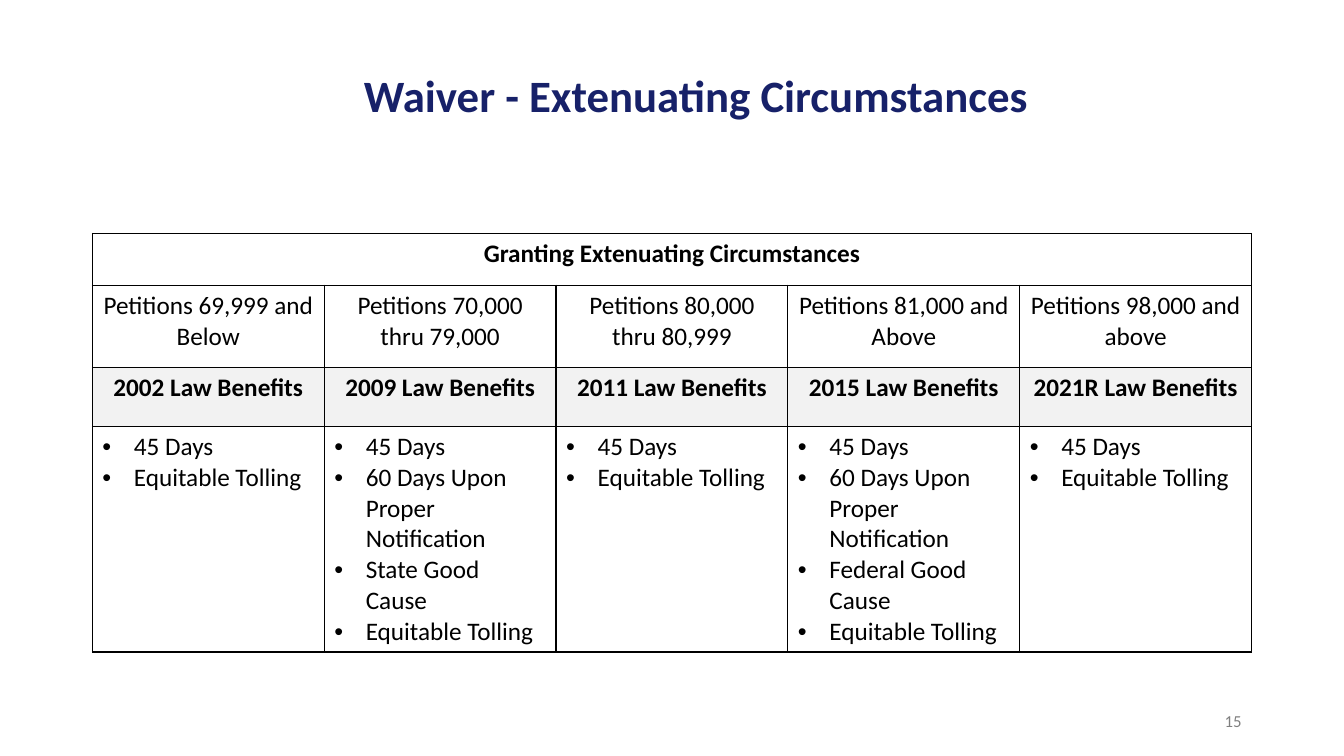
from dataclasses import dataclass

from lxml.etree import SubElement
from pptx import Presentation
from pptx.dml.color import RGBColor
from pptx.enum.text import MSO_ANCHOR, MSO_AUTO_SIZE, PP_ALIGN
from pptx.oxml.ns import qn
from pptx.util import Pt


@dataclass(frozen=True)
class Theme:
    """Colours, font and type sizes of the slide."""
    font: str = "Calibri"
    navy: str = "172169"
    black: str = "000000"
    grey: str = "808080"
    shade: str = "F2F2F2"
    title: int = 32
    body: int = 18
    number: int = 12


THEME = Theme()
HEADING = "Granting Extenuating Circumstances"
BASIC = ["45 Days", "Equitable Tolling"]
LAWS = [
    ("Petitions 69,999 and Below", "2002 Law Benefits", BASIC),
    ("Petitions 70,000 thru 79,000", "2009 Law Benefits",
     ["45 Days", "60 Days Upon Proper Notification", "State Good Cause", "Equitable Tolling"]),
    ("Petitions 80,000 thru 80,999", "2011 Law Benefits", BASIC),
    ("Petitions 81,000 and Above", "2015 Law Benefits",
     ["45 Days", "60 Days Upon Proper Notification", "Federal Good Cause", "Equitable Tolling"]),
    ("Petitions 98,000 and above", "2021R Law Benefits", BASIC),
]
ROW_HEIGHTS = [37, 59, 42, 161]


def write(p, text, size, color, align, bold=False):
    """Fill a paragraph with text and format its runs."""
    p.text = text
    p.alignment = align
    for r in p.runs:
        r.font.name = THEME.font
        r.font.size = Pt(size)
        r.font.bold = bold
        r.font.color.rgb = RGBColor.from_string(color)


def add_bullet(p, indent=22.5):
    """Give a paragraph a hanging round bullet."""
    pPr = p._p.get_or_add_pPr()
    pPr.set("marL", str(Pt(indent)))
    pPr.set("indent", str(-Pt(indent)))
    SubElement(pPr, qn("a:buFont"), typeface="Arial")
    SubElement(pPr, qn("a:buChar"), char="•")


def add_borders(cell, width=1):
    """Draw a thin solid line on all four sides of a cell."""
    tcPr = cell._tc.get_or_add_tcPr()
    for side in ("lnL", "lnR", "lnT", "lnB"):
        ln = SubElement(tcPr, qn(f"a:{side}"), w=str(Pt(width)))
        fill = SubElement(ln, qn("a:solidFill"))
        SubElement(fill, qn("a:srgbClr"), val=THEME.black)


def write_cell(cell, text, bold=False):
    """Write one centred line of table text."""
    write(cell.text_frame.paragraphs[0], text, THEME.body, THEME.black, PP_ALIGN.CENTER, bold)


def write_list(cell, items):
    """Write a bulleted list in a table cell."""
    tf = cell.text_frame
    for i, item in enumerate(items):
        p = tf.add_paragraph() if i else tf.paragraphs[0]
        add_bullet(p)
        write(p, item, THEME.body, THEME.black, PP_ALIGN.LEFT)


def add_title(s, text, x, y, w, h):
    """Place and format the title placeholder."""
    sp = s.shapes.title
    sp.left, sp.top, sp.width, sp.height = Pt(x), Pt(y), Pt(w), Pt(h)
    tf = sp.text_frame
    tf.auto_size = MSO_AUTO_SIZE.NONE
    tf.vertical_anchor = MSO_ANCHOR.MIDDLE
    p = tf.paragraphs[0]
    write(p, text, THEME.title, THEME.navy, PP_ALIGN.LEFT, True)
    p.line_spacing = 0.9


def add_law_table(s, x, y, w):
    """Build the table of benefits, one column for each law."""
    frame = s.shapes.add_table(len(ROW_HEIGHTS), len(LAWS), Pt(x), Pt(y), Pt(w), Pt(sum(ROW_HEIGHTS)))
    table = frame.table
    table.first_row = table.horz_banding = False
    for row, height in zip(table.rows, ROW_HEIGHTS):
        row.height = Pt(height)
    for col in table.columns:
        col.width = Pt(w / len(LAWS))
    for cell in table.iter_cells():
        add_borders(cell)
        cell.fill.background()
    table.cell(0, 0).merge(table.cell(0, len(LAWS) - 1))
    write_cell(table.cell(0, 0), HEADING, True)
    for c, (petitions, law, benefits) in enumerate(LAWS):
        write_cell(table.cell(1, c), petitions)
        cell = table.cell(2, c)
        write_cell(cell, law, True)
        cell.fill.solid()
        cell.fill.fore_color.rgb = RGBColor.from_string(THEME.shade)
        write_list(table.cell(3, c), benefits)


def add_slide_number(s, text, x, y, w, h):
    """Place the slide number at the right of its box."""
    tf = s.shapes.add_textbox(Pt(x), Pt(y), Pt(w), Pt(h)).text_frame
    tf.word_wrap = True
    tf.vertical_anchor = MSO_ANCHOR.MIDDLE
    write(tf.paragraphs[0], text, THEME.number, THEME.grey, PP_ALIGN.RIGHT)


def main():
    """Build the slide and save it."""
    prs = Presentation()
    prs.slide_width, prs.slide_height = Pt(960), Pt(540)
    s = prs.slides.add_slide(prs.slide_layouts[5])
    add_title(s, "Waiver - Extenuating Circumstances", 252.72, 48, 600, 44)
    add_law_table(s, 66, 166.8, 828)
    add_slide_number(s, "15", 678, 500.5, 216, 28.75)
    prs.save("out.pptx")


if __name__ == "__main__":
    main()
